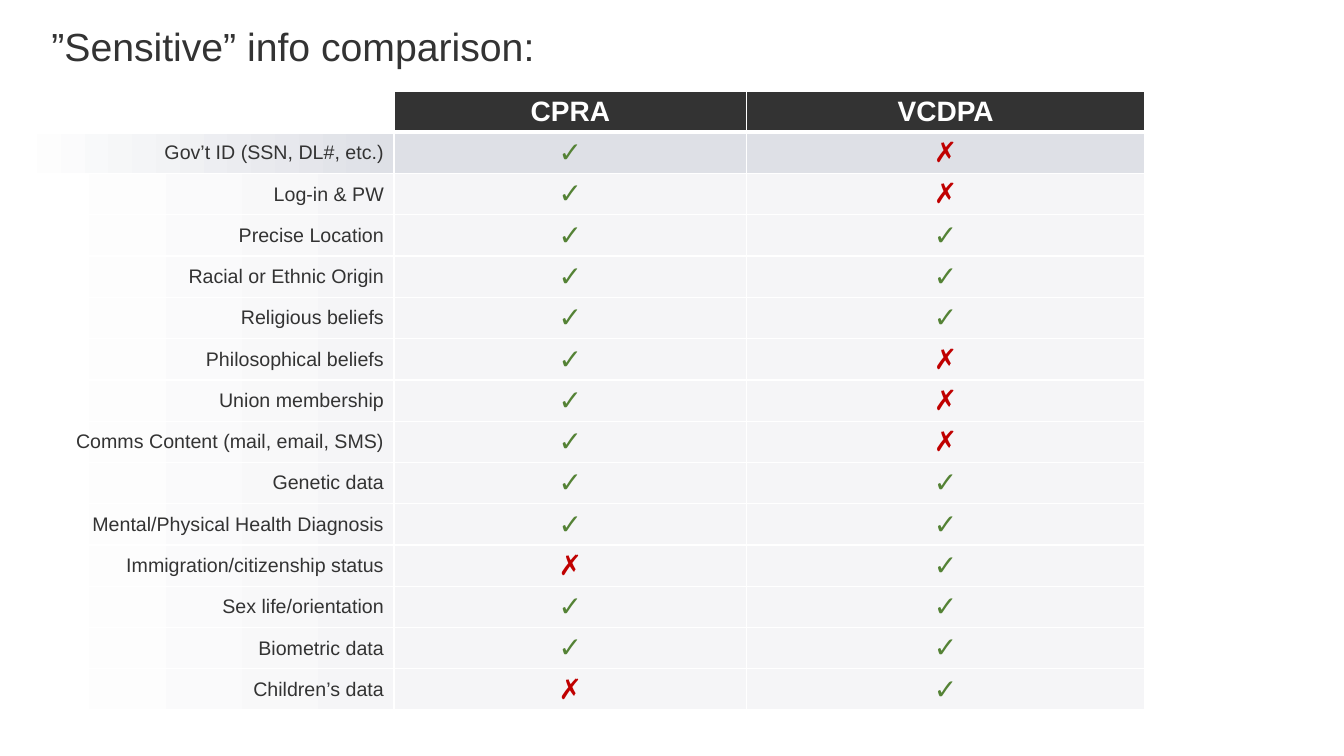
import pptx
import pptx.dml.color
import pptx.enum.text
import pptx.oxml
import pptx.oxml.ns
import pptx.util

Pt = pptx.util.Pt
ALIGN = pptx.enum.text.PP_ALIGN
MIDDLE = pptx.enum.text.MSO_ANCHOR.MIDDLE
INK, WHITE = "333333", "FFFFFF"
MARKS = {"✓": "548235", "✗": "C00000"}
WIDTHS = (272, 252, 284)
ROW = 29.5
ITEMS = (
    ("Gov’t ID (SSN, DL#, etc.)", "✓✗"),
    ("Log-in & PW", "✓✗"),
    ("Precise Location", "✓✓"),
    ("Racial or Ethnic Origin", "✓✓"),
    ("Religious beliefs", "✓✓"),
    ("Philosophical beliefs", "✓✗"),
    ("Union membership", "✓✗"),
    ("Comms Content (mail, email, SMS)", "✓✗"),
    ("Genetic data", "✓✓"),
    ("Mental/Physical Health Diagnosis", "✓✓"),
    ("Immigration/citizenship status", "✗✓"),
    ("Sex life/orientation", "✓✓"),
    ("Biometric data", "✓✓"),
    ("Children’s data", "✗✓"),
)


def tint(code):
    return pptx.dml.color.RGBColor.from_string(code)


class Deck:
    """Holds the style and the current slide."""

    def __init__(self, font):
        self.font = font
        self.show = pptx.Presentation()
        self.show.slide_width, self.show.slide_height = Pt(960), Pt(540)
        self.slide = self.show.slides.add_slide(self.show.slide_layouts[5])

    def text(self, frame, words, size, color, align, bold=False):
        para = frame.paragraphs[0]
        para.alignment = align
        run = para.add_run()
        run.text = words
        run.font.name, run.font.size, run.font.bold = self.font, Pt(size), bold
        run.font.color.rgb = tint(color)
        return para

    def title(self, words, left, top, width, height):
        box = self.slide.shapes.title
        box.left, box.top = Pt(left), Pt(top)
        box.width, box.height = Pt(width), Pt(height)
        frame = box.text_frame
        frame.word_wrap, frame.vertical_anchor = True, MIDDLE
        frame.auto_size = pptx.enum.text.MSO_AUTO_SIZE.NONE
        para = self.text(frame, words, 28, INK, ALIGN.LEFT)
        para.line_spacing = 0.9

    def grid(self, left, top, widths, count, height):
        table = self.slide.shapes.add_table(
            count, len(widths), Pt(left), Pt(top),
            Pt(sum(widths)), Pt(count * height)).table
        table.horz_banding = False
        for column, width in zip(table.columns, widths):
            column.width = Pt(width)
        for row in table.rows:
            row.height = Pt(height)
        return table

    def cell(self, cell, words, size, color, align, bold, fill, fade=False):
        cell.vertical_anchor = MIDDLE
        cell.margin_top = cell.margin_bottom = 0
        self.text(cell.text_frame, words, size, color, align, bold)
        if fade:
            cell.fill.gradient()
            cell.fill.gradient_angle = 0
            for stop, code in zip(cell.fill.gradient_stops, (WHITE, fill)):
                stop.color.rgb = tint(code)
        else:
            cell.fill.solid()
            cell.fill.fore_color.rgb = tint(fill)

    def edges(self, cell, top=1, base=1):
        props = cell._tc.get_or_add_tcPr()
        sides = (("L", 1), ("R", 1), ("T", top), ("B", base))
        for spot, (side, width) in enumerate(sides):
            props.insert(spot, pptx.oxml.parse_xml(
                f'<a:ln{side} {pptx.oxml.ns.nsdecls("a")} w="{Pt(width)}">'
                f'<a:solidFill><a:srgbClr val="{WHITE}"/></a:solidFill>'
                f'</a:ln{side}>'))


def main():
    deck = Deck("Arial")
    deck.title("”Sensitive” info comparison:", 29.5, 9.5, 780, 51)
    table = deck.grid(9.5, 65, WIDTHS, len(ITEMS) + 1, ROW)
    table.cell(0, 0).fill.background()
    for col, law in enumerate(("CPRA", "VCDPA"), 1):
        deck.cell(table.cell(0, col), law, 20, WHITE, ALIGN.CENTER, True, INK)
    for row, (label, marks) in enumerate(ITEMS, 1):
        fill = "DEE0E6" if row == 1 else "F5F5F7"
        deck.cell(table.cell(row, 0), label, 14, INK, ALIGN.RIGHT, False,
                  fill, True)
        for col, mark in enumerate(marks, 1):
            deck.cell(table.cell(row, col), mark, 20, MARKS[mark],
                      ALIGN.CENTER, True, fill)
    for row, line in enumerate(table.rows):
        for cell in line.cells:
            deck.edges(cell, 3 if row == 1 else 1, 3 if row == 0 else 1)
    deck.show.save("out.pptx")


if __name__ == "__main__":
    main()
